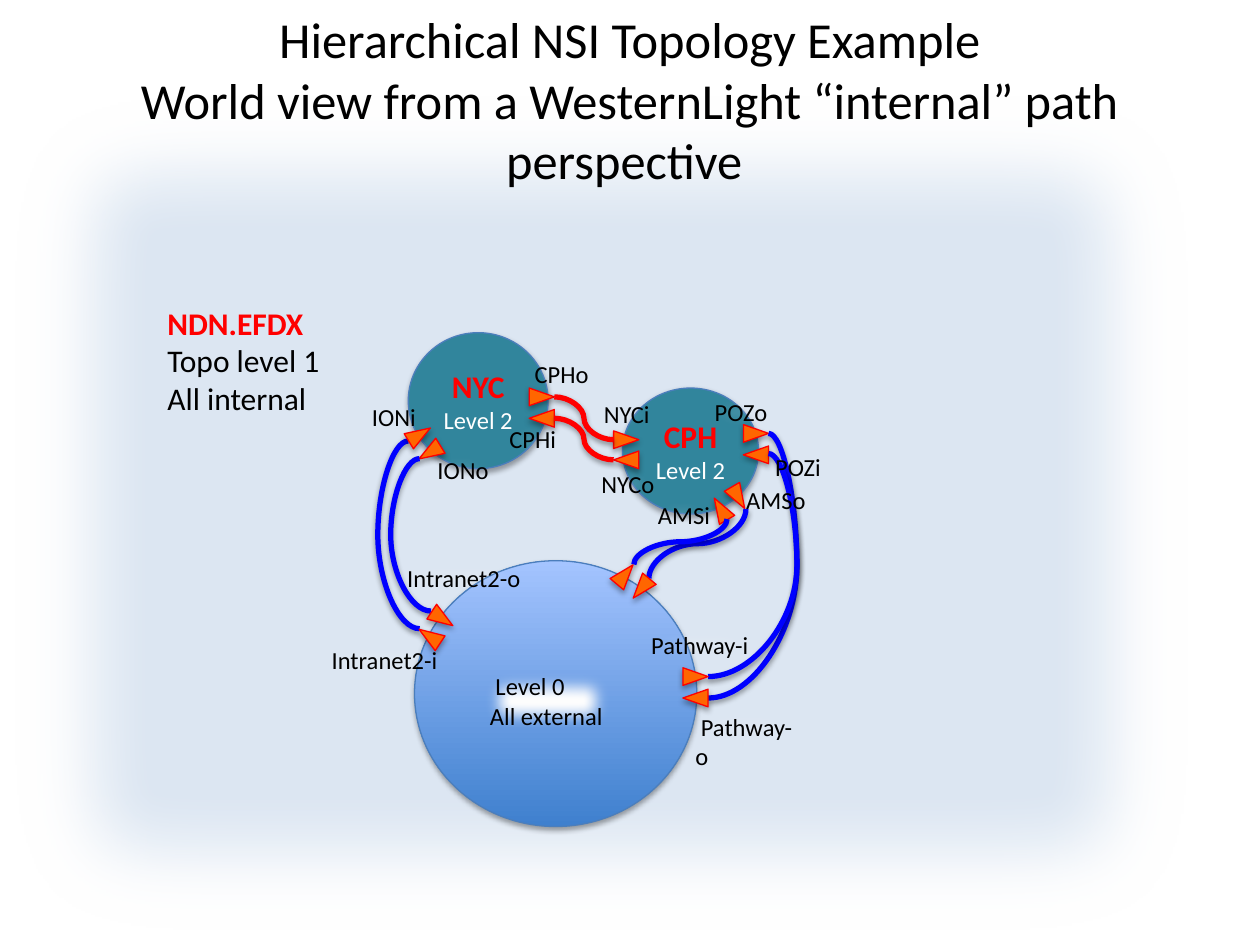
from lxml import etree
from pptx import Presentation
from pptx import util as u
from pptx.dml import color
from pptx.enum import shapes, text
from pptx.oxml import ns

SHAPE = shapes.MSO_SHAPE
RED, BLUE, BLACK, WHITE = "FF0000", "0000FF", "000000", "FFFFFF"
HEADING = {"size": u.Pt(18), "bold": True}
BODY = {"size": u.Pt(18), "bold": False}
SMALL = {"size": u.Pt(14), "bold": False}
TITLE = {"size": u.Pt(28.8), "bold": False}
LABEL_HEIGHT = 0.34


def rgb(value):
    return color.RGBColor.from_string(value)


def apply(target, values):
    for name, value in values.items():
        setattr(target, name, value)


class TopologySlide:
    def __init__(self, slide):
        self.slide = slide
        self.font = "Calibri"
        self.shapes = slide.shapes

    def group(self):
        self.shapes = self.slide.shapes.add_group_shape().shapes

    def ungroup(self):
        self.shapes = self.slide.shapes

    def effect(self, shape, tag, **attributes):
        effects = etree.SubElement(shape._element.spPr, ns.qn("a:effectLst"))
        return etree.SubElement(effects, ns.qn(f"a:{tag}"), attributes)

    def shadow(self, shape, distance, opacity):
        outer = self.effect(shape, "outerShdw", blurRad="40000", dist=str(distance),
                            dir="5400000", rotWithShape="0")
        tint = etree.SubElement(outer, ns.qn("a:srgbClr"), val=BLACK)
        etree.SubElement(tint, ns.qn("a:alpha"), val=str(opacity * 1000))

    def fill_text(self, shape, paragraphs, align=text.PP_ALIGN.LEFT, **frame_format):
        frame = shape.text_frame
        apply(frame, frame_format)
        for index, runs in enumerate(paragraphs):
            paragraph = frame.add_paragraph() if index else frame.paragraphs[0]
            paragraph.alignment = align
            for words, font_format, ink in runs:
                for line_index, line in enumerate(words.split("\n")):
                    if line_index:
                        paragraph.add_line_break()
                    run = paragraph.add_run()
                    run.text = line
                    apply(run.font, {"name": self.font, **font_format})
                    run.font.color.rgb = rgb(ink)

    def textbox(self, box, paragraphs, **options):
        shape = self.shapes.add_textbox(*map(u.Inches, box))
        self.fill_text(shape, paragraphs, **options)

    def soft_panel(self, box, fill, radius):
        shape = self.shapes.add_shape(SHAPE.RECTANGLE, *map(u.Inches, box))
        shape.fill.solid()
        shape.fill.fore_color.rgb = rgb(fill)
        shape.line.fill.background()
        self.effect(shape, "softEdge", rad=str(u.Pt(radius)))
        return shape

    def label(self, lines, left, top, width, height=LABEL_HEIGHT, wrap=False):
        shape = self.soft_panel((left, top, width, height), WHITE, 10)
        self.fill_text(shape, [[(line, SMALL, BLACK)] for line in lines], word_wrap=wrap,
                       auto_size=text.MSO_AUTO_SIZE.SHAPE_TO_FIT_TEXT,
                       vertical_anchor=text.MSO_ANCHOR.TOP)

    def solid(self, kind, box, fills, outline):
        shape = self.shapes.add_shape(kind, *map(u.Inches, box))
        if len(fills) == 1:
            shape.fill.solid()
            shape.fill.fore_color.rgb = rgb(fills[0])
        else:
            shape.fill.gradient()
            shape.fill.gradient_angle = 90
            for stop, fill in zip(shape.fill.gradient_stops, fills):
                stop.color.rgb = rgb(fill)
        shape.line.color.rgb = rgb(outline)
        shape.line.width = u.Pt(0.75)
        self.shadow(shape, 23000, 35)
        return shape

    def domain(self, box, fills, paragraphs=()):
        shape = self.solid(SHAPE.OVAL, box, fills, "4B7EBC")
        self.fill_text(shape, paragraphs, align=text.PP_ALIGN.CENTER, word_wrap=True,
                       vertical_anchor=text.MSO_ANCHOR.MIDDLE)

    def port(self, left, top, rotation):
        shape = self.solid(SHAPE.ISOSCELES_TRIANGLE, (left, top, 0.14, 0.2), ["FF6600"], RED)
        shape.rotation = rotation % 360

    def port_pair(self, first, second, rotation):
        self.port(*first, rotation)
        self.port(*second, rotation + 180)

    def link(self, begin, end, ink, bend=0.5, upright=False):
        (x1, y1), (x2, y2) = begin, end
        if upright:
            middle_x, middle_y = (x1 + x2) / 2, (y1 + y2) / 2
            half_width, half_height = (y2 - y1) / 2, (x1 - x2) / 2
            x1, x2 = middle_x - half_width, middle_x + half_width
            y1, y2 = middle_y - half_height, middle_y + half_height
        connector = self.shapes.add_connector(
            shapes.MSO_CONNECTOR.CURVE, *map(u.Inches, (x1, y1, x2, y2)))
        properties = connector._element.spPr
        if upright:
            properties.find(ns.qn("a:xfrm")).set("rot", "5400000")
        adjustments = properties.find(ns.qn("a:prstGeom")).find(ns.qn("a:avLst"))
        etree.SubElement(adjustments, ns.qn("a:gd"), name="adj1",
                         fmla=f"val {round(bend * 100000)}")
        connector.line.color.rgb = rgb(ink)
        connector.line.width = u.Pt(3)
        self.shadow(connector, 20000, 38)


def main():
    presentation = Presentation()
    presentation.slide_width, presentation.slide_height = u.Inches(10), u.Inches(7.5)
    topology = TopologySlide(presentation.slides.add_slide(presentation.slide_layouts[6]))

    topology.soft_panel((-0.13, 0.51, 9.82, 7.13), "DCE6F2", 50)
    topology.domain((3.29, 4.45, 2.24, 2.11), ["3F80CE", "A4C4FF"])
    title = ("Hierarchical NSI Topology Example\n"
             "World view from a WesternLight “internal” path perspective ")
    topology.textbox((0.5, 0.3, 9, 0.97), [[(title, TITLE, BLACK)]], word_wrap=True,
                     align=text.PP_ALIGN.CENTER, vertical_anchor=text.MSO_ANCHOR.MIDDLE)
    topology.link((3.33, 4.99), (3.24, 3.5), BLUE, 3.68)
    topology.textbox((1.23, 2.36, 1.45, 1.01),
                     [[("NDN.EFDX", HEADING, RED)], [("Topo level 1", BODY, BLACK)],
                      [("All internal", BODY, BLACK)]],
                     word_wrap=False, auto_size=text.MSO_AUTO_SIZE.SHAPE_TO_FIT_TEXT)

    topology.group()
    topology.domain((3.24, 2.64, 1.11, 1.08), ["31859C"],
                    [[("NYC", HEADING, RED), (" Level 2", SMALL, WHITE)]])
    topology.port_pair((3.26, 3.35), (3.34, 3.49), 58.4)
    topology.port_pair((4.23, 3.05), (4.23, 3.22), 90)

    topology.group()
    topology.domain((4.94, 3.08, 1.08, 1), ["31859C"],
                    [[("CPH", HEADING, RED)], [("Level 2", SMALL, WHITE)]])
    topology.port_pair((4.9, 3.39), (4.9, 3.55), 90)
    topology.port_pair((5.93, 3.34), (5.93, 3.51), 90)
    topology.port_pair((5.79, 3.85), (5.65, 3.94), 149.6)

    topology.ungroup()
    topology.link((3.42, 4.85), (3.33, 3.64), BLUE, 3.54)
    for begin_y, end_y in ((3.15, 3.49), (3.32, 3.65)):
        topology.link((4.4, begin_y), (4.87, end_y), RED)
    for begin_y, end_y in ((3.44, 5.54), (3.6, 5.37)):
        topology.link((6.1, begin_y), (5.62, end_y), BLUE, -0.47)
    topology.link((5.92, 4.04), (5.15, 4.59), BLUE, upright=True)
    topology.link((5.77, 4.12), (5.03, 4.48), BLUE, upright=True)

    topology.label(["Pathway-i"], 5.07, 4.95, 1, wrap=True)
    for name, left, top, width in ((" Intranet2-i", 2.49, 5.07, 1.1),
                                   (" Intranet2-o", 3.09, 4.42, 1.16),
                                   (" Pathway-o", 5.42, 5.6, 0.97)):
        topology.label([name], left, top, width)

    for first, second, rotation in (((3.34, 4.95), (3.44, 4.81), 303.6),
                                    ((5.45, 5.44), (5.45, 5.27), 270),
                                    ((5.02, 4.57), (4.89, 4.46), 219.9)):
        topology.group()
        topology.port_pair(first, second, rotation)
    topology.ungroup()

    for name, left, top, width in (
            (" AMSi", 5.08, 3.92, 0.66), (" POZi", 6.01, 3.54, 0.61),
            (" NYCi", 4.65, 3.12, 0.62), (" NYCo", 4.63, 3.67, 0.68),
            (" AMSo", 5.78, 3.8, 0.72), (" POZo", 5.53, 3.1, 0.67),
            (" CPHo", 4.1, 2.8, 0.68), (" CPHi", 3.9, 3.32, 0.62),
            (" IONo", 3.33, 3.56, 0.66), (" IONi", 2.81, 3.14, 0.6)):
        topology.label([name], left, top, width)
    topology.label([" Level 0", "All external"], 3.79, 5.28, 1.11, 0.57)

    presentation.save("out.pptx")


if __name__ == "__main__":
    main()
